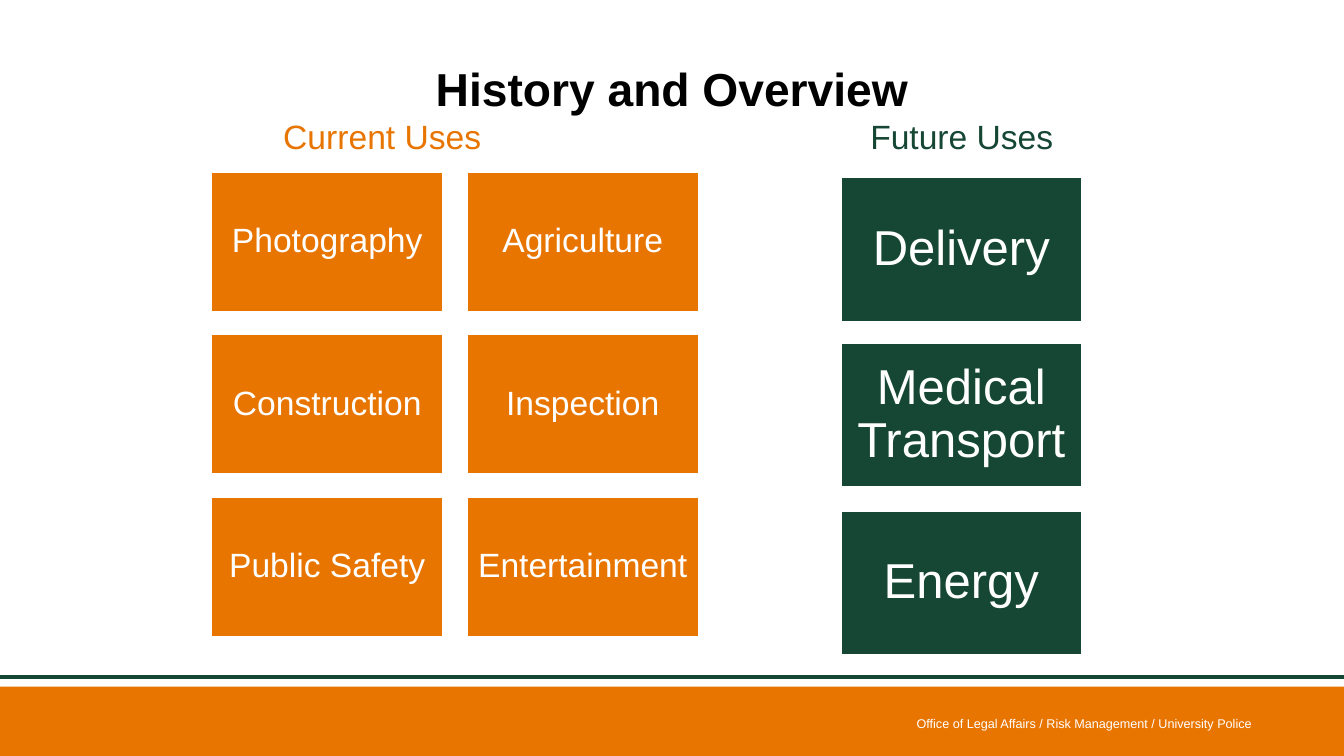
from pptx import Presentation
from pptx.dml.color import RGBColor
from pptx.enum.shapes import MSO_CONNECTOR, MSO_SHAPE
from pptx.enum.text import MSO_ANCHOR, PP_ALIGN
from pptx.oxml.ns import qn
from pptx.util import Pt
from lxml.etree import SubElement

ORANGE = RGBColor(0xE8, 0x75, 0x00)
GREEN = RGBColor(0x15, 0x47, 0x34)
WHITE = RGBColor(0xFF, 0xFF, 0xFF)
BLACK = RGBColor(0x00, 0x00, 0x00)


def write(shape, text, size, color, align=PP_ALIGN.CENTER, bold=False):
    frame = shape.text_frame
    frame.text = text
    frame.word_wrap = True
    frame.vertical_anchor = MSO_ANCHOR.MIDDLE
    para = frame.paragraphs[0]
    para.alignment = align
    para.line_spacing = 0.9
    font = para.runs[0].font
    font.name = "Arial"
    font.size = Pt(size)
    font.bold = bold
    font.color.rgb = color
    return frame


def block(shapes, left, top, width, height, color):
    rect = shapes.add_shape(MSO_SHAPE.RECTANGLE, Pt(left), Pt(top), Pt(width), Pt(height))
    rect.shadow.inherit = False
    rect.fill.solid()
    rect.fill.fore_color.rgb = color
    rect.line.fill.background()
    return rect


deck = Presentation()
deck.slide_width, deck.slide_height = Pt(960), Pt(540)
slide = deck.slides.add_slide(deck.slide_layouts[5])
shapes = slide.shapes

# Footer band and rule
block(shapes, 0, 490.5, 960, 49.5, ORANGE)
rule = shapes.add_connector(MSO_CONNECTOR.STRAIGHT, 0, Pt(483.5), Pt(960), Pt(483.5))
rule.line.color.rgb = GREEN
rule.line.width = Pt(3)
SubElement(rule._element.spPr, qn("a:effectLst"))

# Title
title = shapes.title
title.left, title.top, title.width, title.height = Pt(66), Pt(19.5), Pt(828), Pt(91.5)
write(title, "History and Overview", 33, BLACK, bold=True)

# Footer text
foot = shapes.add_textbox(Pt(318), Pt(509), Pt(576), Pt(15))
frame = write(foot, "Office of Legal Affairs / Risk Management / University Police",
              9, WHITE, PP_ALIGN.RIGHT)
frame.margin_right = 0
frame.paragraphs[0].line_spacing = 1

# Cards: names, columns, left, row tops, column pitch, width, height, size, inset, colour
current = ["Photography", "Agriculture", "Construction",
           "Inspection", "Public Safety", "Entertainment"]
future = ["Delivery", "Medical Transport", "Energy"]
grids = [
    (current, 2, 151, (123, 239, 355), 182.5, 165.5, 99.5, 24, 7, ORANGE),
    (future, 1, 601, (126.5, 245, 365), 0, 171.5, 103, 35, 10, GREEN),
]
for names, cols, left, tops, pitch, width, height, size, inset, color in grids:
    group = shapes.add_group_shape()
    for i, name in enumerate(names):
        row, col = divmod(i, cols)
        card = block(group.shapes, left + col * pitch, tops[row], width, height, color)
        card.line.color.rgb = WHITE
        card.line.width = Pt(1)
        frame = write(card, name, size, WHITE)
        frame.margin_left = frame.margin_right = Pt(inset)
        frame.margin_top = frame.margin_bottom = Pt(inset)

# Column headings
for left, text, color in [(66, "Current Uses", ORANGE), (480, "Future Uses", GREEN)]:
    head = shapes.add_textbox(Pt(left), Pt(79.5), Pt(414), Pt(36))
    frame = write(head, text, 24, color)
    frame.vertical_anchor = MSO_ANCHOR.TOP
    frame.paragraphs[0].line_spacing = 1

deck.save("out.pptx")
